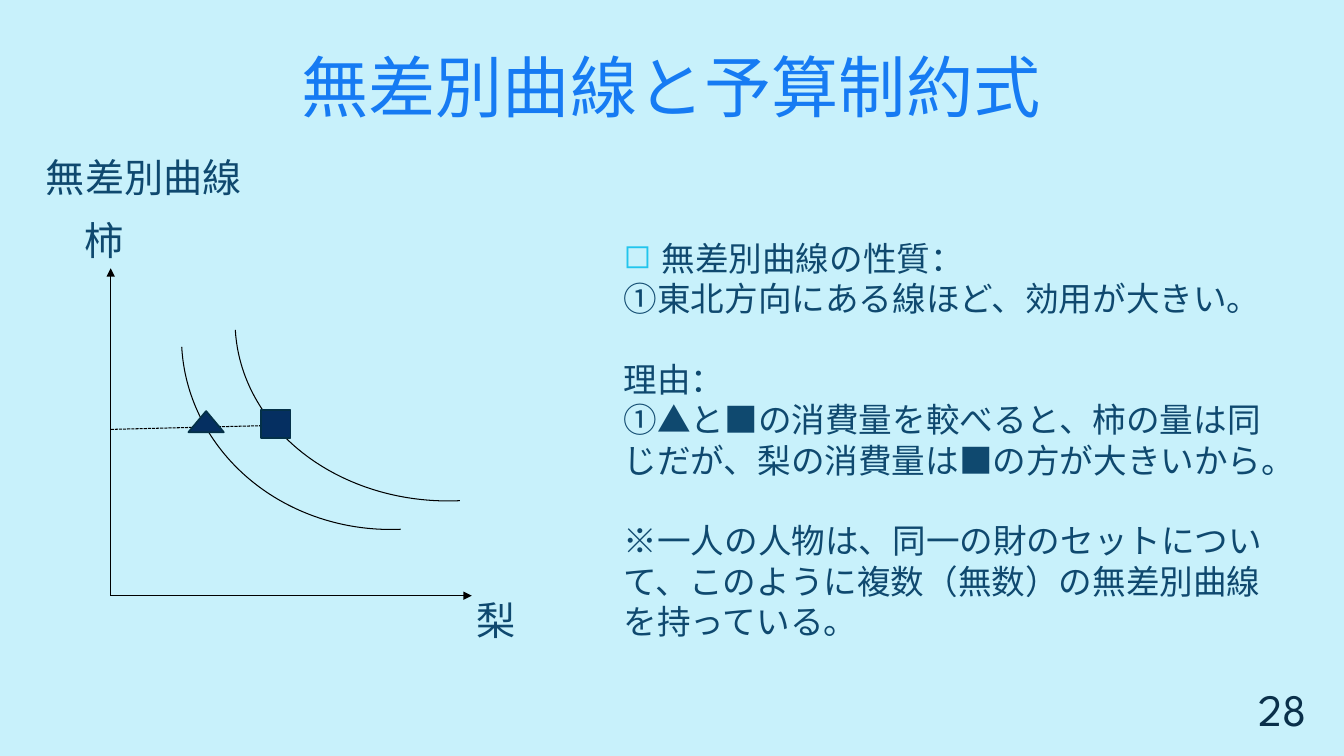
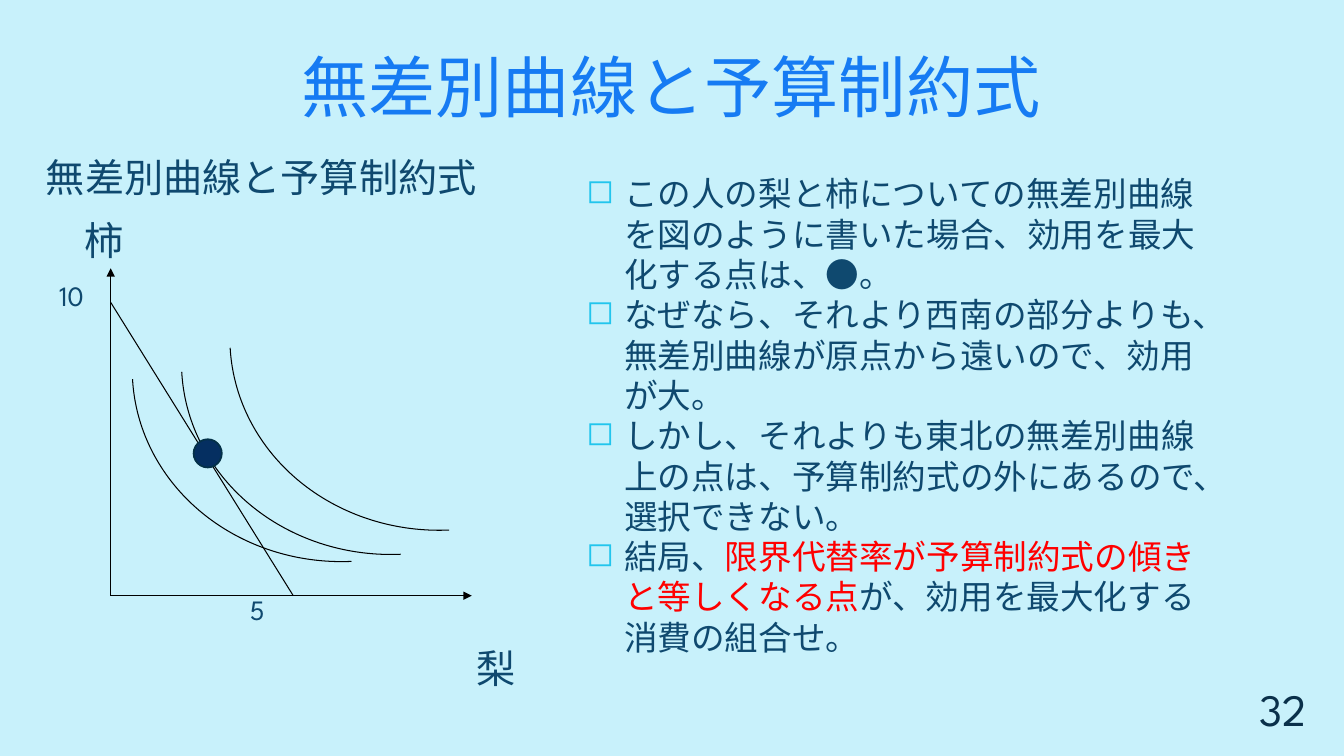
import pptx
import pptx.dml.color
import pptx.enum.dml
import pptx.enum.shapes
import pptx.enum.text
import pptx.oxml
import pptx.oxml.ns
import pptx.util

Cm = pptx.util.Cm
Pt = pptx.util.Pt
RGB = pptx.dml.color.RGBColor
KIND = pptx.enum.shapes.MSO_SHAPE
ALIGN = pptx.enum.text.PP_ALIGN
ANCHOR = pptx.enum.text.MSO_ANCHOR

SKY = RGB(0xC8, 0xF1, 0xFB)
BLUE = RGB(0x16, 0x7B, 0xF3)
TEXT = RGB(0x0F, 0x49, 0x6F)
PAGE = RGB(0x0A, 0x30, 0x4A)
NAVY = RGB(0x05, 0x2F, 0x61)
EDGE = RGB(0x04, 0x31, 0x48)
RED = RGB(0xFF, 0x00, 0x00)
BLACK = RGB(0, 0, 0)
CYAN = "22C5ED"
FONT = "League Spartan"
TITLE = "無差別曲線と予算制約式"

LEFT, BASE = 2.79, 15.01
TOP, RIGHT = 6.76, 11.89
BEND = (10.64, 9.78)


def assign(item, values):
    for name, value in values.items():
        setattr(item, name, value)


def add_xml(parent, tag, **values):
    node = pptx.oxml.parse_xml(
        f'<a:{tag} {pptx.oxml.ns.nsdecls("a")}/>')
    for name, value in values.items():
        node.set(name, value)
    parent.append(node)
    return node


def place(item, box):
    names = ("left", "top", "width", "height")
    assign(item, dict(zip(names, map(Cm, box))))


def add_run(para, text, size, color):
    run = para.add_run()
    run.text = text
    assign(run.font, {"name": FONT, "size": Pt(size), "bold": False})
    run.font.color.rgb = color
    add_xml(run.font._element, "ea", typeface=FONT)


def style(para, size, align=ALIGN.LEFT, gap=0):
    assign(para, {"alignment": align, "line_spacing": Pt(size * 1.2),
                  "space_before": Pt(gap), "space_after": Pt(0)})


def set_bullet(para):
    props = para._element.get_or_add_pPr()
    props.set("marL", str(Cm(0.95)))
    props.set("indent", str(-Cm(0.95)))
    add_xml(add_xml(props, "buClr"), "srgbClr", val=CYAN)
    add_xml(props, "buChar", char="◻")


def fill_line(shape, text, size, color, align, anchor):
    frame = shape.text_frame
    assign(frame, {"word_wrap": True, "vertical_anchor": anchor,
                   "auto_size": pptx.enum.text.MSO_AUTO_SIZE.NONE})
    para = frame.paragraphs[0]
    style(para, size, align)
    add_run(para, text, size, color)


def add_label(slide, text, left, mid, size=28):
    width = 1 + len(text) * size * 0.04
    box = slide.shapes.add_textbox(
        Cm(left), Cm(mid - 0.7), Cm(width), Cm(1.4))
    fill_line(box, text, size, TEXT, ALIGN.LEFT, ANCHOR.MIDDLE)


def add_body(slide, box, paras):
    frame = slide.shapes.add_textbox(*map(Cm, box)).text_frame
    frame.word_wrap = True
    for index, (runs, bullet, gap) in enumerate(paras):
        para = frame.add_paragraph() if index else frame.paragraphs[0]
        style(para, 24, gap=gap)
        if bullet:
            set_bullet(para)
        for text, color in runs:
            add_run(para, text, 24, color)


def add_line(slide, start, end, arrow=False, dash=False):
    line = slide.shapes.add_connector(
        pptx.enum.shapes.MSO_CONNECTOR.STRAIGHT,
        *map(Cm, start + end))
    line.line.color.rgb = BLACK
    line.line.width = Pt(0.75)
    if dash:
        line.line.dash_style = pptx.enum.dml.MSO_LINE.SQUARE_DOT
    props = line._element.spPr
    if arrow:
        add_xml(props.find(pptx.oxml.ns.qn("a:ln")),
                "tailEnd", type="triangle")
    add_xml(props, "effectLst")


def add_form(slide, kind, box, color, width):
    shape = slide.shapes.add_shape(kind, *map(Cm, box))
    shape.shadow.inherit = False
    shape.line.color.rgb = color
    shape.line.width = Pt(width)
    return shape


def add_curve(slide, left, top, size=BEND):
    arc = add_form(slide, KIND.ARC, (left, top) + size, BLACK, 0.75)
    arc.fill.background()
    arc.rotation = 177
    arc.adjustments[0] = 162.35
    arc.adjustments[1] = 215.91


def add_mark(slide, kind, box):
    mark = add_form(slide, kind, box, EDGE, 1.25)
    mark.fill.solid()
    mark.fill.fore_color.rgb = NAVY


def add_axes(slide, name):
    add_line(slide, (LEFT, BASE), (LEFT, TOP), arrow=True)
    add_line(slide, (LEFT, BASE), (RIGHT, BASE), arrow=True)
    add_label(slide, "柿", 1.88, 6.05)
    add_label(slide, "梨", 11.76, name)


def add_slide(deck, head, page):
    slide = deck.slides.add_slide(deck.slide_layouts[5])
    slide.background.fill.solid()
    slide.background.fill.fore_color.rgb = SKY
    title = slide.shapes.title
    place(title, (0.91, 0.91, 32, 2.39))
    fill_line(title, TITLE, 48, BLUE, ALIGN.CENTER, ANCHOR.BOTTOM)
    add_label(slide, head, 0.91, 4.46)
    box = slide.shapes.add_textbox(*map(Cm, (31.29, 17.12, 1.9, 1.55)))
    fill_line(box, page, 32, PAGE, ALIGN.RIGHT, ANCHOR.BOTTOM)
    return slide


def build_curves(deck):
    slide = add_slide(deck, "無差別曲線", "28")
    add_axes(slide, 15.62)
    add_curve(slide, 4.57, 3.56)
    add_curve(slide, 5.92, 3.4, (10.95, 9.22))
    add_line(slide, (LEFT, 10.82), (6.88, 10.72), dash=True)
    add_mark(slide, KIND.ISOSCELES_TRIANGLE, (4.75, 10.36, 0.89, 0.53))
    add_mark(slide, KIND.RECTANGLE, (6.58, 10.34, 0.74, 0.69))
    rows = (
        ("無差別曲線の性質：", True, 0),
        ("①東北方向にある線ほど、効用が大きい。", False, 0),
        ("理由：", False, 28.8),
        ("①▲と■の消費量を較べると、柿の量は同じだが、"
         "梨の消費量は■の方が大きいから。", False, 0),
        ("※一人の人物は、同一の財のセットについて、"
         "このように複数（無数）の無差別曲線を持っている。", False, 28.8),
    )
    add_body(slide, (15.47, 5.87, 16.64, 10.52),
             [([(text, TEXT)], bullet, gap) for text, bullet, gap in rows])


def build_budget(deck):
    slide = add_slide(deck, TITLE, "32")
    add_label(slide, "10", 1.24, 7.43, 20)
    add_label(slide, "5", 6.05, 15.35, 20)
    add_line(slide, (LEFT, 7.62), (7.39, BASE))
    add_axes(slide, 16.83)
    for left, top in ((3.33, 4.37), (4.57, 4.19), (5.79, 3.58)):
        add_curve(slide, left, top)
    add_mark(slide, KIND.OVAL, (4.88, 11.07, 0.71, 0.71))
    rows = (
        [("この人の梨と柿についての無差別曲線を図のように書いた場合、"
          "効用を最大化する点は、●。", TEXT)],
        [("なぜなら、それより西南の部分よりも、"
          "無差別曲線が原点から遠いので、効用が大。", TEXT)],
        [("しかし、それよりも東北の無差別曲線上の点は、"
          "予算制約式の外にあるので、選択できない。", TEXT)],
        [("結局、", TEXT),
         ("限界代替率が予算制約式の傾きと等しくなる点", RED),
         ("が、効用を最大化する消費の組合せ。", TEXT)],
    )
    add_body(slide, (14.53, 4.24, 16.64, 12.57),
             [(runs, True, 0) for runs in rows])


def main():
    deck = pptx.Presentation()
    assign(deck, {"slide_width": Cm(33.87), "slide_height": Cm(19.05)})
    build_curves(deck)
    build_budget(deck)
    deck.save("out.pptx")


if __name__ == "__main__":
    main()
